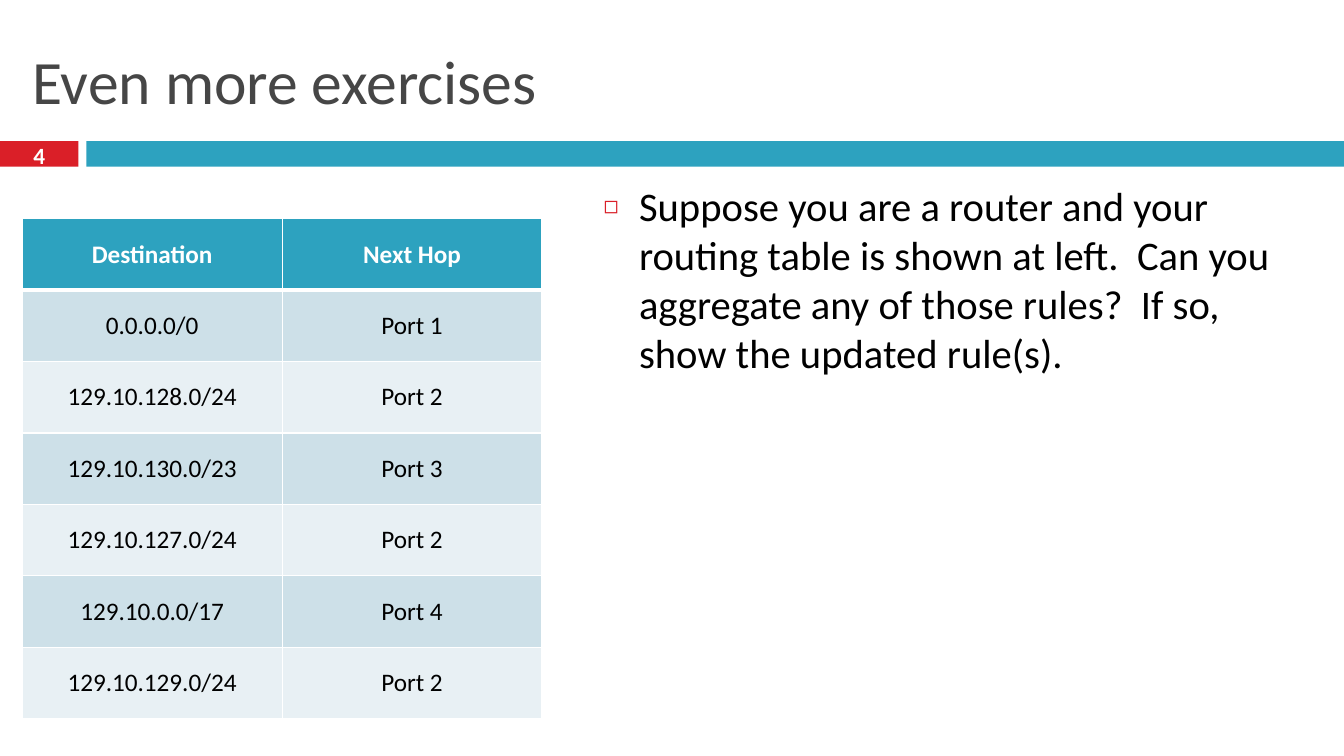
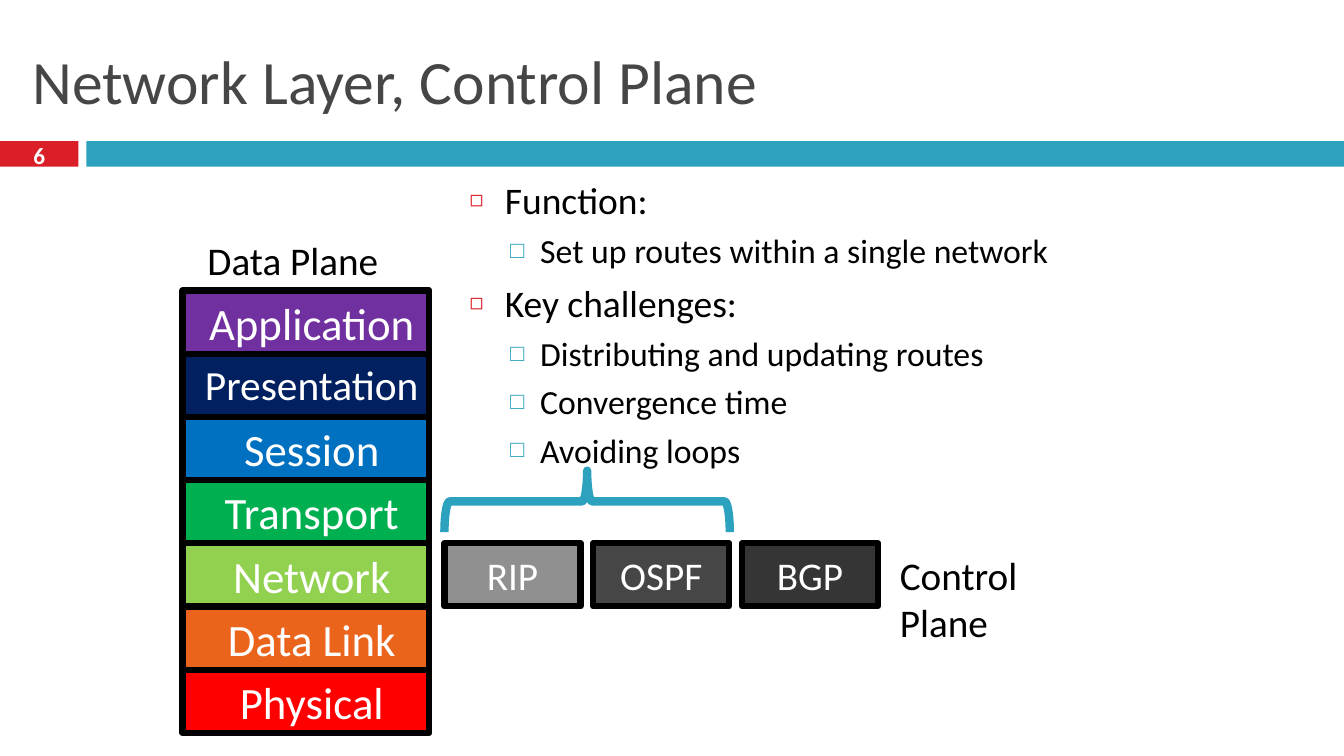
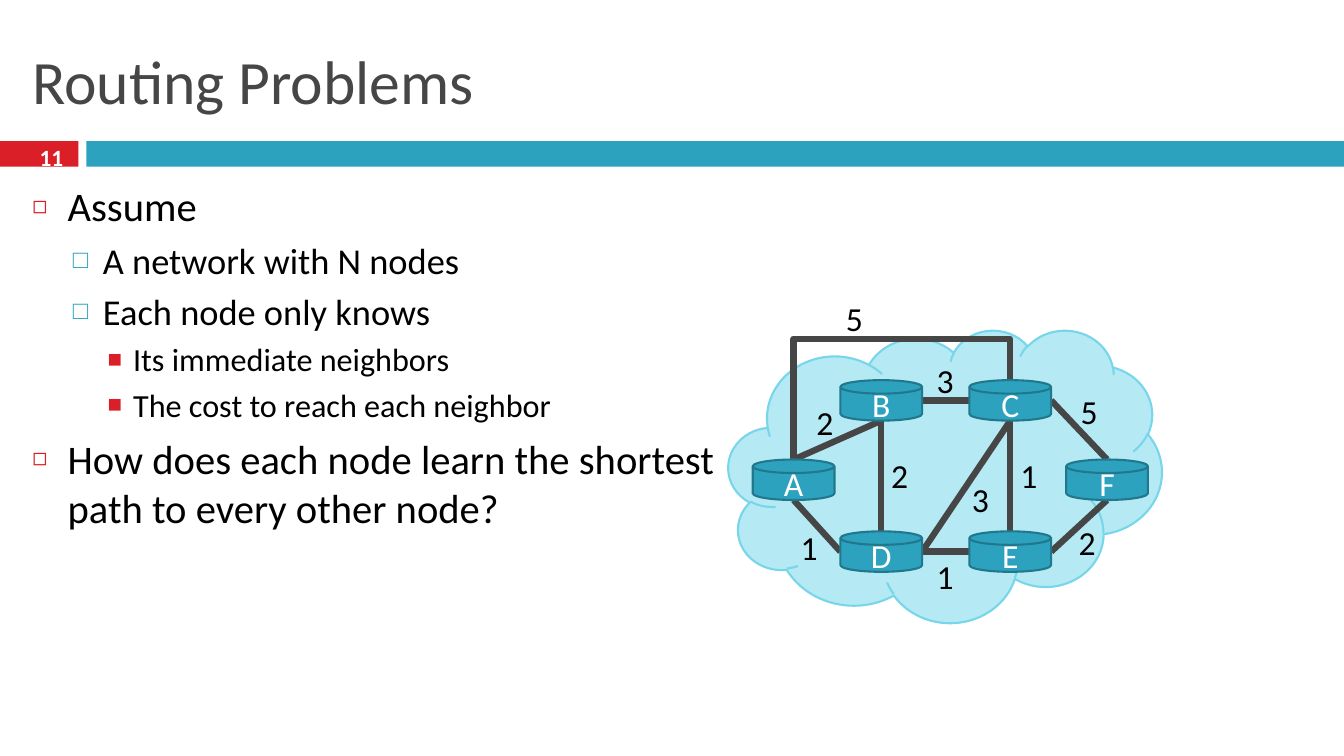
from dataclasses import dataclass

from pptx import Presentation
from pptx.dml.color import RGBColor
from pptx.enum.shapes import MSO_CONNECTOR, MSO_SHAPE
from pptx.enum.text import MSO_ANCHOR, MSO_AUTO_SIZE, PP_ALIGN
from pptx.oxml.ns import qn
from pptx.oxml.xmlchemy import OxmlElement
from pptx.util import Cm, Pt


@dataclass(frozen=True)
class Theme:
    font: str = "Calibri"
    red: str = "DA1F28"
    teal: str = "2DA2BF"
    teal_dark: str = "21788D"
    gray: str = "464646"
    black: str = "000000"
    white: str = "FFFFFF"
    row_tints: tuple = ("CDE0E8", "E8F0F4")
    cloud_fill: str = "B5E9F4"
    cloud_line: str = "78D6EA"
    title_size: float = 44
    number_size: float = 16.6
    table_size: float = 18
    layer_size: float = 32
    label_size: float = 28
    node_size: float = 24
    body_sizes: tuple = (29, 26, 23)
    compact_body_sizes: tuple = (26.8, 24.1)
    thick_line: float = 4.5


@dataclass(frozen=True)
class Box:
    """A rectangle in centimetres."""
    left: float
    top: float
    width: float
    height: float

    def lengths(self):
        return Cm(self.left), Cm(self.top), Cm(self.width), Cm(self.height)

    def inner(self, left, top, width, height):
        """A box given relative to the top left corner of this one."""
        return Box(self.left + left, self.top + top, width, height)

    def side(self, name):
        middle = self.left + self.width / 2
        center = self.top + self.height / 2
        return {
            "top": (middle, self.top),
            "left": (self.left, center),
            "bottom": (middle, self.top + self.height),
            "right": (self.left + self.width, center),
        }[name]


@dataclass(frozen=True)
class BulletLevel:
    margin: float
    hanging: float
    space_before: float
    symbol: str
    color: str
    percent: int


THEME = Theme()
SLIDE = Box(0, 0, 33.87, 19.05)
TITLE = Box(0.56, 0.64, 32.74, 2.74)
NUMBER_BAND = Box(0, 3.56, 1.98, 0.64)
TITLE_BAND = Box(2.18, 3.56, 31.69, 0.64)
NUMBER = Box(0, 3.48, 1.98, 0.84)
BULLETS = (
    BulletLevel(0.89, 0.89, 7, "◻", THEME.red, 60),
    BulletLevel(1.78, 0.76, 5.5, "□", THEME.teal, 70),
    BulletLevel(2.54, 0.64, 5, "■", THEME.red, 75),
)


def rgb(color):
    return RGBColor.from_string(color)


def add_child(parent, tag, **attributes):
    child = OxmlElement(tag)
    for name, value in attributes.items():
        child.set(name, str(value))
    parent.append(child)
    return child


def add_run(paragraph, text, size, color, bold=False):
    run = paragraph.add_run()
    run.text = text
    run.font.name = THEME.font
    run.font.size = Pt(size)
    run.font.bold = bold
    run.font.color.rgb = rgb(color)


def add_filled_shape(slide, kind, box, fill=None, line=None, line_width=1.5):
    shape = slide.shapes.add_shape(kind, *box.lengths())
    shape.shadow.inherit = False
    if fill:
        shape.fill.solid()
        shape.fill.fore_color.rgb = rgb(fill)
    else:
        shape.fill.background()
    if line:
        shape.line.color.rgb = rgb(line)
        shape.line.width = Pt(line_width)
    else:
        shape.line.fill.background()
    return shape


def write_centered(shape, text, size, anchor=MSO_ANCHOR.MIDDLE):
    shape.text_frame.vertical_anchor = anchor
    paragraph = shape.text_frame.paragraphs[0]
    paragraph.alignment = PP_ALIGN.CENTER
    add_run(paragraph, text, size, THEME.white)
    return paragraph


def add_label(slide, box, text, size, color=THEME.black, bold=False,
              alignment=PP_ALIGN.LEFT, anchor=MSO_ANCHOR.TOP, wrap=True):
    frame = slide.shapes.add_textbox(*box.lengths()).text_frame
    frame.word_wrap = wrap
    frame.vertical_anchor = anchor
    paragraph = frame.paragraphs[0]
    paragraph.alignment = alignment
    add_run(paragraph, text, size, color, bold)


def place(shape, box):
    shape.left, shape.top, shape.width, shape.height = box.lengths()


def prepare_layout(presentation):
    """Put the title place on the layout that all slides use."""
    layout = presentation.slide_layouts.get_by_name("Title and Content")
    place(layout.placeholders[0], TITLE)
    return layout


def move_bands_to_layout(slide, layout):
    """Draw the two bands and hand them over to the layout."""
    for box, color in ((NUMBER_BAND, THEME.red), (TITLE_BAND, THEME.teal)):
        band = add_filled_shape(slide, MSO_SHAPE.RECTANGLE, box, color)
        layout.shapes.element.append(band.element)


def add_titled_slide(presentation, layout, title, number, number_box=NUMBER):
    slide = presentation.slides.add_slide(layout)
    frame = slide.shapes.title.text_frame
    frame.auto_size = MSO_AUTO_SIZE.NONE
    frame.vertical_anchor = MSO_ANCHOR.MIDDLE
    paragraph = frame.paragraphs[0]
    paragraph.alignment = PP_ALIGN.LEFT
    add_run(paragraph, title, THEME.title_size, THEME.gray)
    add_label(slide, number_box, number, THEME.number_size, THEME.white, True,
              PP_ALIGN.CENTER, MSO_ANCHOR.MIDDLE)
    return slide


def format_bullet(paragraph, level):
    bullet = BULLETS[level]
    paragraph.level = level
    paragraph.space_before = Pt(bullet.space_before)
    properties = paragraph._p.get_or_add_pPr()
    properties.set("marL", str(Cm(bullet.margin)))
    properties.set("indent", str(-Cm(bullet.hanging)))
    add_child(add_child(properties, "a:buClr"), "a:srgbClr", val=bullet.color)
    add_child(properties, "a:buSzPct", val=bullet.percent * 1000)
    add_child(properties, "a:buChar", char=bullet.symbol)


def fill_body(slide, box, items, sizes=THEME.body_sizes):
    """Write (level, text) items into the body placeholder."""
    body = slide.placeholders[1]
    place(body, box)
    frame = body.text_frame
    frame.auto_size = MSO_AUTO_SIZE.NONE
    for index, (level, text) in enumerate(items):
        paragraph = frame.add_paragraph() if index else frame.paragraphs[0]
        format_bullet(paragraph, level)
        add_run(paragraph, text, sizes[level], THEME.black)


def add_cell_borders(cell, bottom_width):
    properties = cell._tc.get_or_add_tcPr()
    widths = {"a:lnL": 1, "a:lnR": 1, "a:lnT": 1, "a:lnB": bottom_width}
    for tag, width in widths.items():
        line = add_child(properties, tag, w=Pt(width))
        add_child(add_child(line, "a:solidFill"), "a:srgbClr", val=THEME.white)


def add_routing_table(slide, box, rows):
    table = slide.shapes.add_table(len(rows), len(rows[0]), *box.lengths()).table
    for row_index, row in enumerate(rows):
        header = row_index == 0
        fill = THEME.teal if header else THEME.row_tints[(row_index - 1) % 2]
        for column_index, text in enumerate(row):
            cell = table.cell(row_index, column_index)
            add_cell_borders(cell, 3 if header else 1)
            cell.fill.solid()
            cell.fill.fore_color.rgb = rgb(fill)
            cell.vertical_anchor = MSO_ANCHOR.MIDDLE
            paragraph = cell.text_frame.paragraphs[0]
            paragraph.alignment = PP_ALIGN.CENTER
            add_run(paragraph, text, THEME.table_size,
                    THEME.white if header else THEME.black, header)


def add_layer_stack(slide, box, layers):
    height = box.height / len(layers)
    for index, (name, color, size) in enumerate(layers):
        layer = add_filled_shape(
            slide, MSO_SHAPE.RECTANGLE,
            box.inner(0, index * height, box.width, height),
            color, THEME.black, THEME.thick_line)
        paragraph = write_centered(layer, name, size, MSO_ANCHOR.TOP)
        paragraph._p.get_or_add_pPr().set("marL", str(Cm(0.3)))


def add_protocol_row(slide, box, protocols, gap=0.32):
    width = (box.width - gap * (len(protocols) - 1)) / len(protocols)
    for index, (name, color) in enumerate(protocols):
        protocol = add_filled_shape(
            slide, MSO_SHAPE.RECTANGLE,
            box.inner(index * (width + gap), 0, width, box.height),
            color, THEME.black, THEME.thick_line)
        write_centered(protocol, name, THEME.label_size)


def add_brace_above(slide, box):
    """Fill the box with a left brace turned to point upwards."""
    offset = (box.width - box.height) / 2
    upright = box.inner(offset, -offset, box.height, box.width)
    brace = add_filled_shape(slide, MSO_SHAPE.LEFT_BRACE, upright,
                             line=THEME.teal, line_width=6)
    brace.adjustments[0] = 0.083
    brace.rotation = 90


def add_link(slide, start, end, kind=MSO_CONNECTOR.STRAIGHT):
    link = slide.shapes.add_connector(kind, *(Cm(value) for value in start + end))
    link.line.color.rgb = rgb(THEME.gray)
    link.line.width = Pt(THEME.thick_line)
    add_child(link.element.spPr, "a:effectLst")
    return link


def add_arched_link(slide, start, end, rise):
    """Join two points by an elbow that runs the given rise above the start."""
    middle_x, middle_y = (start[0] + end[0]) / 2, (start[1] + end[1]) / 2
    half_run, half_climb = (end[0] - start[0]) / 2, (start[1] - end[1]) / 2
    link = add_link(slide,
                    (middle_x + half_climb, middle_y + half_run),
                    (middle_x - half_climb, middle_y - half_run),
                    MSO_CONNECTOR.ELBOW)
    properties = link.element.spPr
    properties.find(qn("a:xfrm")).set("rot", "5400000")
    guides = properties.find(qn("a:prstGeom")).find(qn("a:avLst"))
    ratio = round(rise / (2 * half_climb) * 100000)
    add_child(guides, "a:gd", name="adj1", fmla=f"val {ratio}")


def add_network(slide, box):
    columns = {"A": 0.61, "B": 2.82, "C": 6.07, "D": 2.82, "E": 6.07, "F": 8.51}
    rows = {"A": 3.27, "B": 1.27, "C": 1.27, "D": 5.08, "E": 5.08, "F": 3.27}
    nodes = {name: box.inner(columns[name], rows[name], 2.06, 1.02)
             for name in columns}
    links = (
        ("F", "bottom", "E", "right"), ("C", "right", "F", "top"),
        ("B", "right", "C", "left"), ("E", "left", "D", "right"),
        ("A", "bottom", "D", "left"), ("A", "top", "B", "bottom"),
        ("D", "top", "B", "bottom"), ("C", "bottom", "D", "right"),
        ("C", "bottom", "E", "top"),
    )
    costs = (
        ("5", 2.67, -0.94), ("2", 1.93, 1.7), ("3", 4.96, 0.63),
        ("5", 8.59, 1.42), ("2", 8.54, 4.72), ("1", 4.96, 5.58),
        ("1", 1.53, 4.85), ("2", 3.81, 3.04), ("3", 5.85, 3.63),
        ("1", 7.07, 3.04),
    )
    add_filled_shape(slide, MSO_SHAPE.CLOUD, box, THEME.cloud_fill, THEME.cloud_line)
    for start, start_side, end, end_side in links:
        add_link(slide, nodes[start].side(start_side), nodes[end].side(end_side))
    add_arched_link(slide, nodes["A"].side("top"), nodes["C"].side("top"), 3.04)
    for name, node_box in nodes.items():
        node = add_filled_shape(slide, MSO_SHAPE.FLOWCHART_MAGNETIC_DISK,
                                node_box, THEME.teal, THEME.teal_dark)
        write_centered(node, name, THEME.node_size)
    for cost, left, top in costs:
        add_label(slide, box.inner(left, top, 1, 1.27), cost, THEME.node_size,
                  alignment=PP_ALIGN.CENTER, wrap=False)


def build_exercise_slide(presentation, layout):
    slide = add_titled_slide(presentation, layout, "Even more exercises", "4")
    move_bands_to_layout(slide, layout)
    add_routing_table(slide, Box(0.56, 5.51, 13.1, 12.6), (
        ("Destination", "Next Hop"),
        ("0.0.0.0/0", "Port 1"),
        ("129.10.128.0/24", "Port 2"),
        ("129.10.130.0/23", "Port 3"),
        ("129.10.127.0/24", "Port 2"),
        ("129.10.0.0/17", "Port 4"),
        ("129.10.129.0/24", "Port 2"),
    ))
    fill_body(slide, Box(14.96, 4.44, 18.34, 14.17), (
        (0, "Suppose you are a router and your routing table is shown at left.  "
            "Can you aggregate any of those rules?  If so, show the updated rule(s)."),
    ))


def build_control_plane_slide(presentation, layout):
    slide = add_titled_slide(presentation, layout, "Network Layer, Control Plane", "6")
    fill_body(slide, Box(11.58, 4.34, 17.65, 7.52), (
        (0, "Function:"),
        (1, "Set up routes within a single network"),
        (0, "Key challenges:"),
        (1, "Distributing and updating routes"),
        (1, "Convergence time"),
        (1, "Avoiding loops"),
    ), THEME.compact_body_sizes)
    add_layer_stack(slide, Box(4.6, 7.32, 6.22, 11.15), (
        ("Application", "7030A0", THEME.layer_size),
        ("Presentation", "002060", 29.6),
        ("Session", "0070C0", THEME.layer_size),
        ("Transport", "00B050", THEME.layer_size),
        ("Network", "92D050", THEME.layer_size),
        ("Data Link", "EB641B", THEME.layer_size),
        ("Physical", "FF0000", THEME.layer_size),
    ))
    add_brace_above(slide, Box(11.2, 11.86, 7.19, 1.55))
    add_protocol_row(slide, Box(11.2, 13.69, 10.93, 1.59), (
        ("RIP", "909090"), ("OSPF", THEME.gray), ("BGP", "353535"),
    ))
    add_label(slide, Box(22.43, 13.77, 5.6, 1.45), "Control Plane", THEME.label_size)
    add_label(slide, Box(4.98, 5.82, 4.98, 1.45), "Data Plane", THEME.label_size)


def build_routing_slide(presentation, layout):
    slide = add_titled_slide(presentation, layout, "Routing Problems", "11",
                             Box(0.56, 3.53, 1.47, 0.84))
    fill_body(slide, Box(0.56, 4.44, 18.39, 14.17), (
        (0, "Assume"),
        (1, "A network with N nodes"),
        (1, "Each node only knows"),
        (2, "Its immediate neighbors"),
        (2, "The cost to reach each neighbor"),
        (0, "How does each node learn the shortest path to every other node?"),
    ))
    add_network(slide, Box(18.36, 8.31, 10.92, 7.37))


def main():
    presentation = Presentation()
    presentation.slide_width, presentation.slide_height = SLIDE.lengths()[2:]
    layout = prepare_layout(presentation)
    build_exercise_slide(presentation, layout)
    build_control_plane_slide(presentation, layout)
    build_routing_slide(presentation, layout)
    presentation.save("out.pptx")


if __name__ == "__main__":
    main()
